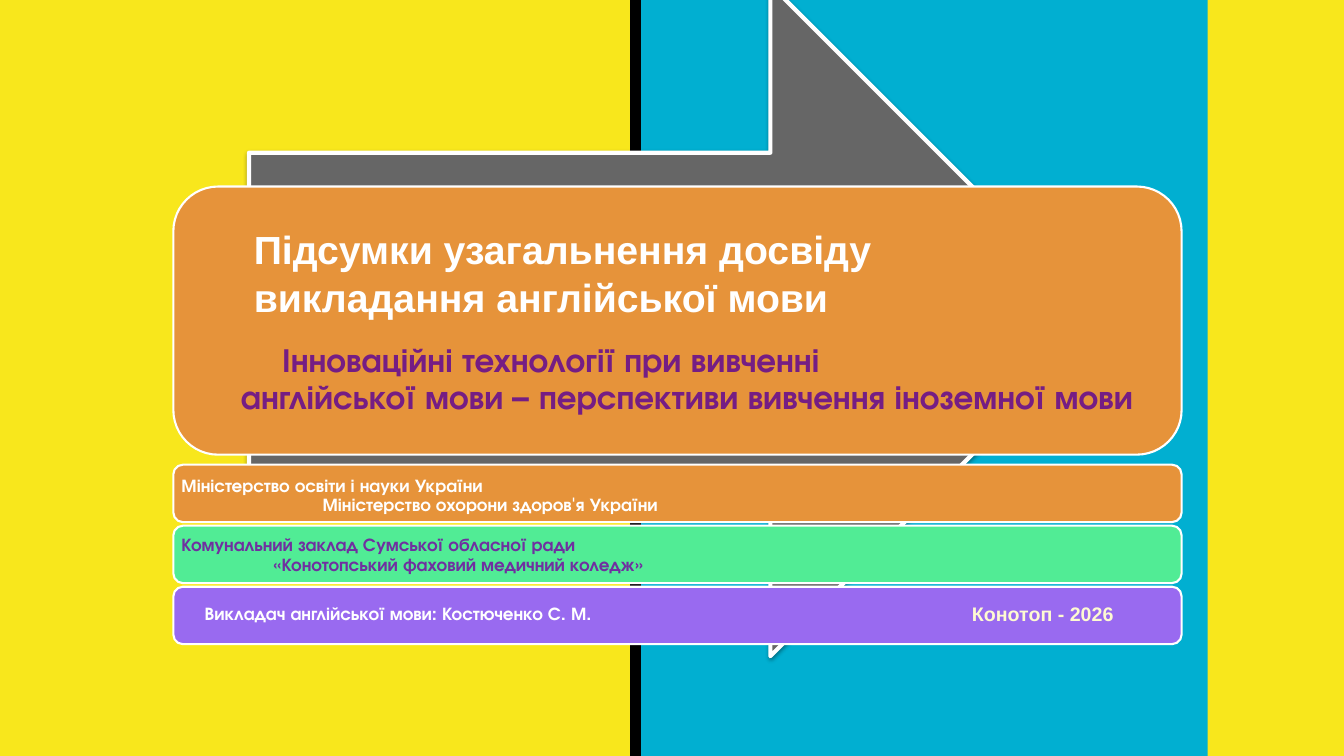
from lxml.etree import SubElement
from pptx import Presentation
from pptx.dml.color import RGBColor
from pptx.enum.shapes import MSO_SHAPE
from pptx.enum.text import MSO_ANCHOR
from pptx.oxml.ns import qn
from pptx.util import Inches, Pt

WIDE, HIGH = Inches(13.33), Inches(7.5)
GEYTER = "TeX Gyre Adventor"
WHITE, ORANGE = "FFFFFF", "E6933A"
# Left and width of the cards, in percent of the slide's width
LEFT, SPAN = 12.9, 75.02


def paint(code):
    return RGBColor.from_string(code)


def across(share):
    return round(WIDE * share / 100)


def down(share):
    return round(HIGH * share / 100)


def place(box):
    """Turn left, top, width and height in percent into lengths."""
    left, top, width, height = box
    return across(left), down(top), across(width), down(height)


def block(slide, kind, box, fill, line=0):
    shape = slide.shapes.add_shape(kind, *place(box))
    shape.shadow.inherit = False
    shape.fill.solid()
    shape.fill.fore_color.rgb = paint(fill)
    if line:
        shape.line.color.rgb = paint(WHITE)
        shape.line.width = Pt(line)
    else:
        shape.line.fill.background()
    return shape


def card(slide, top, height, fill):
    box = LEFT, top, SPAN, height
    block(slide, MSO_SHAPE.ROUNDED_RECTANGLE, box, fill, line=1.5)


def shade(shape):
    """Add a soft shadow that falls straight down."""
    effects = shape.element.spPr.find(qn("a:effectLst"))
    outer = SubElement(effects, qn("a:outerShdw"), blurRad=str(Pt(3.1)),
                       dist=str(Pt(1.6)), dir="5400000", rotWithShape="0")
    color = SubElement(outer, qn("a:srgbClr"), val="000000")
    SubElement(color, qn("a:alpha"), val="38000")


def write(slide, box, lines, size, color=WHITE, font=GEYTER, inset=0.05,
          space=0.9, anchor=MSO_ANCHOR.MIDDLE):
    """Write (indent in percent, words) pairs, one paragraph each."""
    frame = slide.shapes.add_textbox(*place(box)).text_frame
    frame.word_wrap = True
    frame.vertical_anchor = anchor
    frame.margin_left = frame.margin_right = Inches(inset)
    frame.margin_top = frame.margin_bottom = Inches(inset)
    for index, (indent, words) in enumerate(lines):
        para = frame.add_paragraph() if index else frame.paragraphs[0]
        para.line_spacing = space
        para._p.get_or_add_pPr().set("marL", str(across(indent)))
        run = para.add_run()
        run.text = words
        run.font.name = font
        run.font.size = Pt(size)
        run.font.bold = True
        run.font.color.rgb = paint(color)


def backdrop(slide):
    slide.background.fill.solid()
    slide.background.fill.fore_color.rgb = paint("F8E71C")
    block(slide, MSO_SHAPE.RECTANGLE, (46.88, 0, 0.82, 100), "000000")
    block(slide, MSO_SHAPE.RECTANGLE, (47.7, 0, 42.16, 100), "01AFD1")
    arrow = block(slide, MSO_SHAPE.RIGHT_ARROW, (18.53, -2, 63.77, 88.8),
                  "666666", line=3)
    shade(arrow)


def heading(slide):
    card(slide, 24.67, 35.47, ORANGE)
    write(slide, (13.8, 25.47, 74.64, 49.6),
          [(6.38, "Інноваційні технології при вивченні"),
           (3.3, "англійської мови – перспективи вивчення іноземної мови")],
          24, "751D84", inset=0.11)
    write(slide, (18.15, 28.53, 53.04, 13.87),
          [(0, "Підсумки узагальнення досвіду викладання англійської мови")],
          28, font="Arial", inset=0.1, space=1.0, anchor=MSO_ANCHOR.TOP)


def details(slide):
    rows = [
        (ORANGE, WHITE, [(0, "Міністерство освіти і науки України"),
                         (10.5, "Міністерство охорони здоров'я України")]),
        ("51EC95", "7030A0",
         [(0, "Комунальний заклад Сумської обласної ради"),
          (6.83, "«Конотопський фаховий медичний коледж»")]),
        ("996AF0", WHITE,
         [(1.73, "Викладач англійської мови: Костюченко С. М.")]),
    ]
    for index, (fill, color, lines) in enumerate(rows):
        card(slide, 61.47 + 8.07 * index, 7.6, fill)
        top = 62.2 + 7.87 * index
        write(slide, (13.13, top, 74.57, 6.8), lines, 13, color)
    write(slide, (71.94, top, 14, 6.8), [(0, "Конотоп - 2026")],
          14, "FEFAD2", font="Arial")


def main():
    deck = Presentation()
    deck.slide_width, deck.slide_height = WIDE, HIGH
    slide = deck.slides.add_slide(deck.slide_layouts[6])
    backdrop(slide)
    heading(slide)
    details(slide)
    deck.save("out.pptx")


if __name__ == "__main__":
    main()
